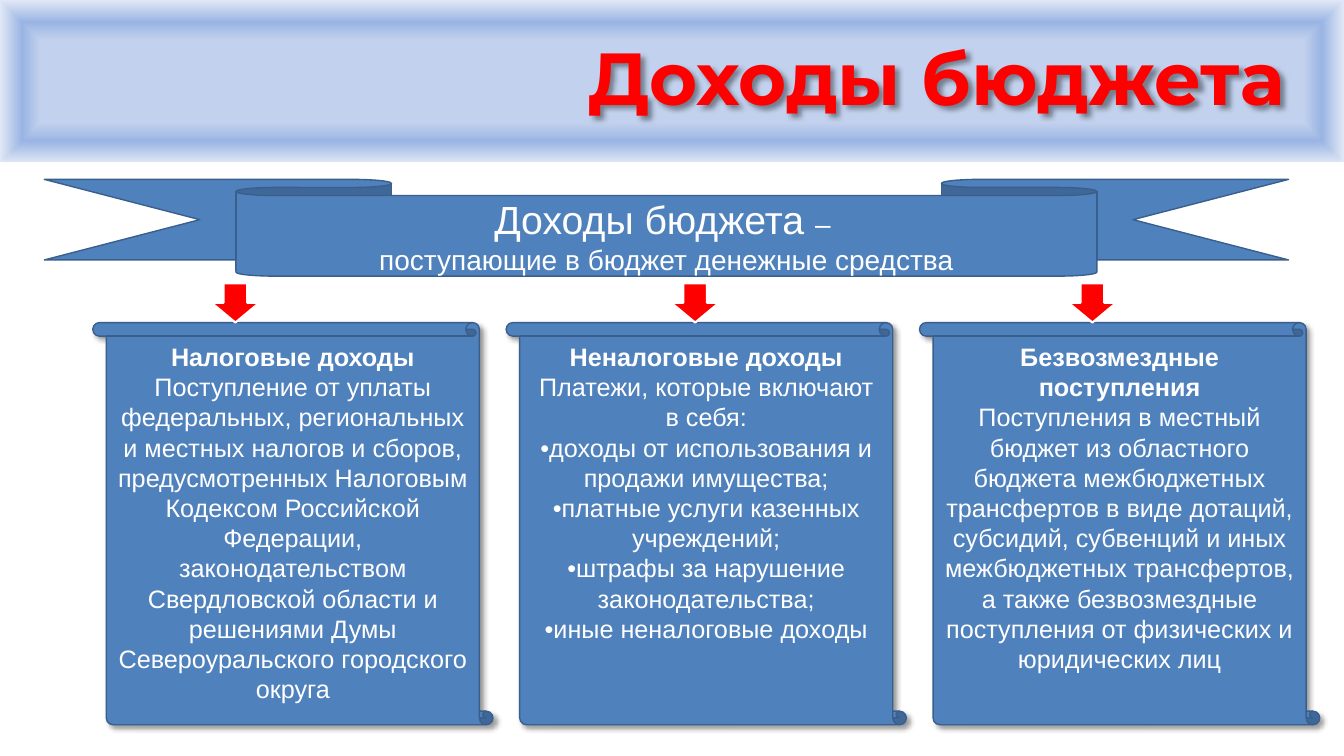
from lxml import etree
from pptx import Presentation
from pptx.dml.color import RGBColor
from pptx.enum.shapes import MSO_CONNECTOR, MSO_SHAPE
from pptx.enum.text import MSO_ANCHOR, PP_ALIGN
from pptx.oxml import parse_xml
from pptx.oxml.ns import nsdecls, qn
from pptx.util import Inches, Pt

WHITE = RGBColor(0xFF, 0xFF, 0xFF)
RED = RGBColor(0xFF, 0x00, 0x00)
BLUE = RGBColor(0x4F, 0x81, 0xBD)
DARK_BLUE = RGBColor(0x3A, 0x5F, 0x8C)
BAND_STOPS = [
    (50, RGBColor(0xC2, 0xD1, 0xED)),
    (73, RGBColor(0x9A, 0xB5, 0xE4)),
    (100, RGBColor(0xE1, 0xE8, 0xF5)),
]

SLIDE_W, SLIDE_H = 13.33, 7.5
BAND_H = 1.62
SCROLL_X, SCROLL_Y, SCROLL_W, SCROLL_H = 0.92, 3.2, 3.97, 3.99
SCROLL_PITCH = 4.1
ARROW_XS = [2.1, 6.66, 10.6]

INCOME_TYPES = [
    ("Налоговые доходы", [
        "Поступление от уплаты федеральных, региональных и местных налогов "
        "и сборов, предусмотренных Налоговым Кодексом Российской Федерации, "
        "законодательством Свердловской области и решениями Думы "
        "Североуральского городского округа",
    ]),
    ("Неналоговые доходы", [
        "Платежи, которые включают в себя:",
        "•доходы от использования и продажи имущества;",
        "•платные услуги казенных учреждений;",
        "•штрафы за нарушение законодательства;",
        "•иные неналоговые доходы",
    ]),
    ("Безвозмездные поступления", [
        "Поступления в местный бюджет из областного бюджета межбюджетных "
        "трансфертов в виде дотаций, субсидий, субвенций и иных межбюджетных "
        "трансфертов, а также безвозмездные поступления от физических и "
        "юридических лиц",
    ]),
]


def add_preset(slide, preset, box, fill, line, line_pt):
    sp = slide.shapes.add_shape(preset, *(Inches(v) for v in box))
    sp.shadow.inherit = False
    sp.fill.solid()
    sp.fill.fore_color.rgb = fill
    sp.line.color.rgb = line
    sp.line.width = Pt(line_pt)
    return sp


def add_drop_shadow(sp):
    """Soft black shadow falling to the lower right."""
    sp.shadow.inherit = False
    effects = sp.element.spPr.find(qn("a:effectLst"))
    effects.append(parse_xml(
        f'<a:outerShdw {nsdecls("a")} blurRad="{Pt(4)}" dist="{Pt(3)}" '
        'dir="2700000" algn="tl" rotWithShape="0"><a:srgbClr val="000000">'
        '<a:alpha val="40000"/></a:srgbClr></a:outerShdw>'))


def style_paragraph(p, size, bold=False):
    p.alignment = PP_ALIGN.CENTER
    p.font.name = "Arial"
    p.font.size = Pt(size)
    p.font.bold = bold
    p.font.color.rgb = WHITE


def add_header_band(slide, x, y, w, h):
    sp = slide.shapes.add_shape(
        MSO_SHAPE.RECTANGLE, Inches(x), Inches(y), Inches(w), Inches(h))
    sp.shadow.inherit = False
    sp.line.fill.background()
    stops = "".join(
        f'<a:gs pos="{pos * 1000}"><a:srgbClr val="{color}"/></a:gs>'
        for pos, color in BAND_STOPS)
    sp.element.spPr.find(qn("a:prstGeom")).addnext(parse_xml(
        f'<a:gradFill {nsdecls("a")} rotWithShape="1"><a:gsLst>{stops}</a:gsLst>'
        '<a:path path="shape"><a:fillToRect l="50000" t="50000" r="50000" '
        'b="50000"/></a:path></a:gradFill>'))

    edge = slide.shapes.add_connector(
        MSO_CONNECTOR.STRAIGHT, Inches(x), Inches(y + h), Inches(x + w), Inches(y + h))
    edge.line.color.rgb = WHITE
    edge.line.width = Pt(2)
    etree.SubElement(edge.element.spPr, qn("a:effectLst"))


def place_title(slide, x, y, w, h):
    title = slide.shapes.title
    title.left, title.top, title.width, title.height = (
        Inches(v) for v in (x, y, w, h))
    slide.shapes.element.append(title.element)  # in front of the band
    add_drop_shadow(title)
    tf = title.text_frame
    tf.text = "Доходы бюджета"
    tf.vertical_anchor = MSO_ANCHOR.BOTTOM
    p = tf.paragraphs[0]
    p.alignment = PP_ALIGN.RIGHT
    p.line_spacing = 0.9
    font = p.runs[0].font
    font.name = "Montserrat"
    font.size = Pt(52.6)
    font.bold = True
    font.color.rgb = RED
    p.runs[0].font.fill  # the outline goes before the fill
    p.runs[0].element.rPr.insert(0, parse_xml(
        f'<a:ln {nsdecls("a")} w="{Pt(1.5)}"><a:solidFill>'
        f'<a:srgbClr val="{WHITE}"/></a:solidFill></a:ln>')) if hasattr(
        p.runs[0], "element") else None


def add_ribbon(slide, x, y, w, h):
    sp = add_preset(slide, MSO_SHAPE.DOWN_RIBBON, (x, y, w, h), BLUE, DARK_BLUE, 1)
    sp.adjustments[0], sp.adjustments[1] = 0.167, 0.692
    tf = sp.text_frame
    tf.vertical_anchor = MSO_ANCHOR.MIDDLE
    p = tf.paragraphs[0]
    style_paragraph(p, 20)
    for text, size in [("Доходы бюджета ", 28), ("– ", 20)]:
        r = p.add_run()
        r.text = text
        r.font.size = Pt(size)
    p = tf.add_paragraph()
    p.text = "поступающие в бюджет денежные средства"
    style_paragraph(p, 20)


def add_scroll(slide, x, y, w, h, heading, lines):
    sp = add_preset(slide, MSO_SHAPE.VERTICAL_SCROLL, (x, y, w, h), BLUE, DARK_BLUE, 1)
    sp.adjustments[0] = 0.034
    sp.element.spPr.find(qn("a:xfrm")).set("flipH", "1")
    add_drop_shadow(sp)
    tf = sp.text_frame
    tf.vertical_anchor = MSO_ANCHOR.TOP
    tf.text = "\n".join([heading, *lines])
    for i, p in enumerate(tf.paragraphs):
        style_paragraph(p, 18, bold=i == 0)


def main():
    prs = Presentation()
    prs.slide_width, prs.slide_height = Inches(SLIDE_W), Inches(SLIDE_H)
    slide = prs.slides.add_slide(prs.slide_layouts[5])

    add_header_band(slide, 0, 0, SLIDE_W, BAND_H)
    place_title(slide, 2.65, 0.16, 10.19, 1.09)
    for i, (heading, lines) in enumerate(INCOME_TYPES):
        add_scroll(slide, SCROLL_X + i * SCROLL_PITCH, SCROLL_Y,
                   SCROLL_W, SCROLL_H, heading, lines)
    add_ribbon(slide, 0.44, 1.78, 12.34, 0.96)
    for x in ARROW_XS:
        add_preset(slide, MSO_SHAPE.DOWN_ARROW, (x, 2.81, 0.47, 0.39), RED, WHITE, 1.5)

    prs.save("out.pptx")


if __name__ == "__main__":
    main()
